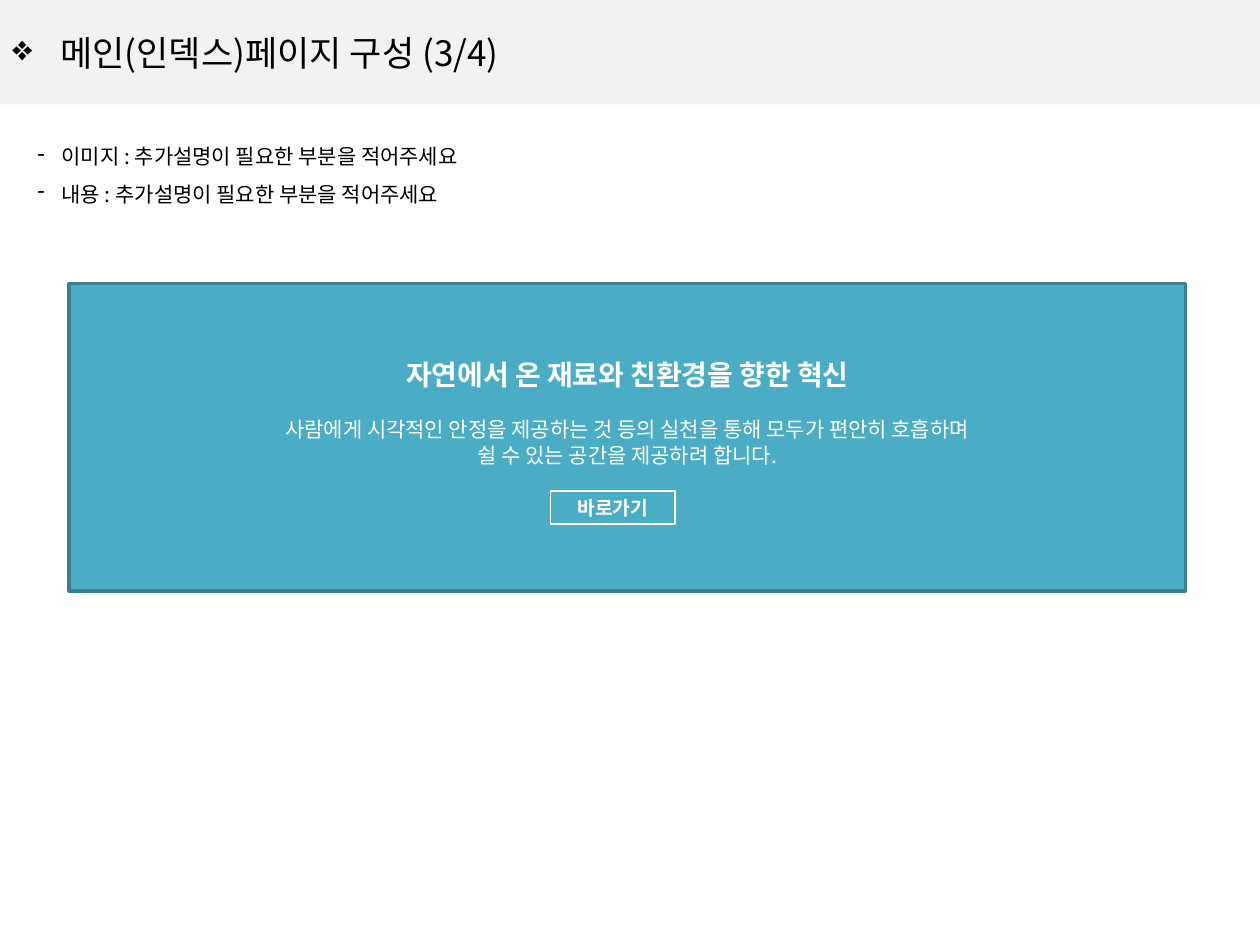
from collections import namedtuple

from lxml.etree import SubElement
from pptx import Presentation
from pptx.dml.color import RGBColor
from pptx.enum.shapes import MSO_SHAPE as Shape
from pptx.enum.text import MSO_ANCHOR as Anchor, MSO_AUTO_SIZE as AutoSize, PP_ALIGN as Align
from pptx.oxml.ns import qn
from pptx.util import Inches, Pt

FONT = "Noto Sans CJK KR"
COLUMNS, ROWS = 100, 75
CELL = Inches(10) / COLUMNS
WHITE, BLACK = "FFFFFF", "000000"
Box = namedtuple("Box", "left top width height")


def color(value):
    """Turn a hex string into a colour."""
    return RGBColor.from_string(value)


def cells(count):
    """Turn a count of grid cells into a length."""
    return round(count * CELL)


def inside(box, left, top, width, height):
    """Return a box placed from the top left corner of another."""
    return Box(box.left + left, box.top + top, width, height)


def add_rectangle(slide, box, fill=None, line=None, line_width=1):
    """Add a rectangle with an optional fill and outline."""
    shape = slide.shapes.add_shape(Shape.RECTANGLE, *map(cells, box))
    shape.shadow.inherit = False
    if fill:
        shape.fill.solid()
        shape.fill.fore_color.rgb = color(fill)
    else:
        shape.fill.background()
    if line:
        shape.line.color.rgb = color(line)
        shape.line.width = Pt(line_width)
    else:
        shape.line.fill.background()
    return shape


def add_text_box(slide, box):
    """Add a wrapping text box that grows with its text."""
    shape = slide.shapes.add_textbox(*map(cells, box))
    shape.text_frame.word_wrap = True
    shape.text_frame.auto_size = AutoSize.SHAPE_TO_FIT_TEXT
    return shape


def add_bullet(paragraph, character, indent):
    """Give a paragraph a hanging bullet."""
    properties = paragraph._p.get_or_add_pPr()
    properties.set("marL", str(cells(indent)))
    properties.set("indent", str(-cells(indent)))
    SubElement(properties, qn("a:buChar")).set("char", character)


def write(shape, lines, size, ink, bold=False, align=Align.CENTER, spacing=None):
    """Write one paragraph per line and return the paragraphs."""
    frame = shape.text_frame
    paragraphs = [frame.paragraphs[0]] + [frame.add_paragraph() for _ in lines[1:]]
    for paragraph, line in zip(paragraphs, lines):
        paragraph.alignment = align
        if spacing:
            paragraph.line_spacing = spacing
        run = paragraph.add_run()
        run.text = line
        run.font.size = Pt(size)
        run.font.bold = bold
        run.font.name = FONT
        run.font.color.rgb = color(ink)
        SubElement(run.font._element, qn("a:ea")).set("typeface", FONT)
    return paragraphs


def add_title_bar(slide, box):
    """Add the grey bar with the page title."""
    bar = add_rectangle(slide, box, fill="F2F2F2")
    bar.text_frame.vertical_anchor = Anchor.MIDDLE
    title = write(bar, ["메인(인덱스)페이지 구성 (3/4)"], 20, BLACK, align=Align.LEFT)
    add_bullet(title[0], "❖", 3.8)


def add_notes_list(slide, box):
    """Add the list of remarks under the title."""
    lines = [f"{topic} : 추가설명이 필요한 부분을 적어주세요" for topic in ("이미지", "내용")]
    shape = add_text_box(slide, box)
    for paragraph in write(shape, lines, 12, BLACK, align=Align.LEFT, spacing=1.5):
        add_bullet(paragraph, "-", 1.9)


def add_button(slide, box, label):
    """Add an outlined button."""
    button = add_rectangle(slide, box, line=WHITE)
    frame = button.text_frame
    frame.margin_top = frame.margin_bottom = 0
    frame.vertical_anchor = Anchor.MIDDLE
    write(button, [label], 11, WHITE, bold=True)


def add_banner(slide, box):
    """Add the banner with its heading, message and button."""
    add_rectangle(slide, box, fill="4BACC6", line="377F92", line_width=2)
    margin = 2.4
    text_width = box.width - 2 * margin
    heading = add_text_box(slide, inside(box, margin, 5.4, text_width, 3.7))
    write(heading, ["자연에서 온 재료와 친환경을 향한 혁신"], 16, WHITE, bold=True)
    message = add_text_box(slide, inside(box, margin, 10.1, text_width, 5))
    write(message, [
        "사람에게 시각적인 안정을 제공하는 것 등의 실천을 통해 모두가 편안히 호흡하며",
        "쉴 수 있는 공간을 제공하려 합니다.",
    ], 12, WHITE)
    add_button(slide, inside(box, 38.2, 16.5, 9.9, 2.6), "바로가기")


def main():
    """Build the slide and save it."""
    presentation = Presentation()
    presentation.slide_width = cells(COLUMNS)
    presentation.slide_height = cells(ROWS)
    slide = presentation.slides.add_slide(presentation.slide_layouts[6])
    add_title_bar(slide, Box(0, 0, COLUMNS, 8.3))
    add_notes_list(slide, Box(2, 9.9, 96.1, 7.1))
    add_banner(slide, Box(5.5, 22.5, 88.6, 24.4))
    presentation.save("out.pptx")


if __name__ == "__main__":
    main()
